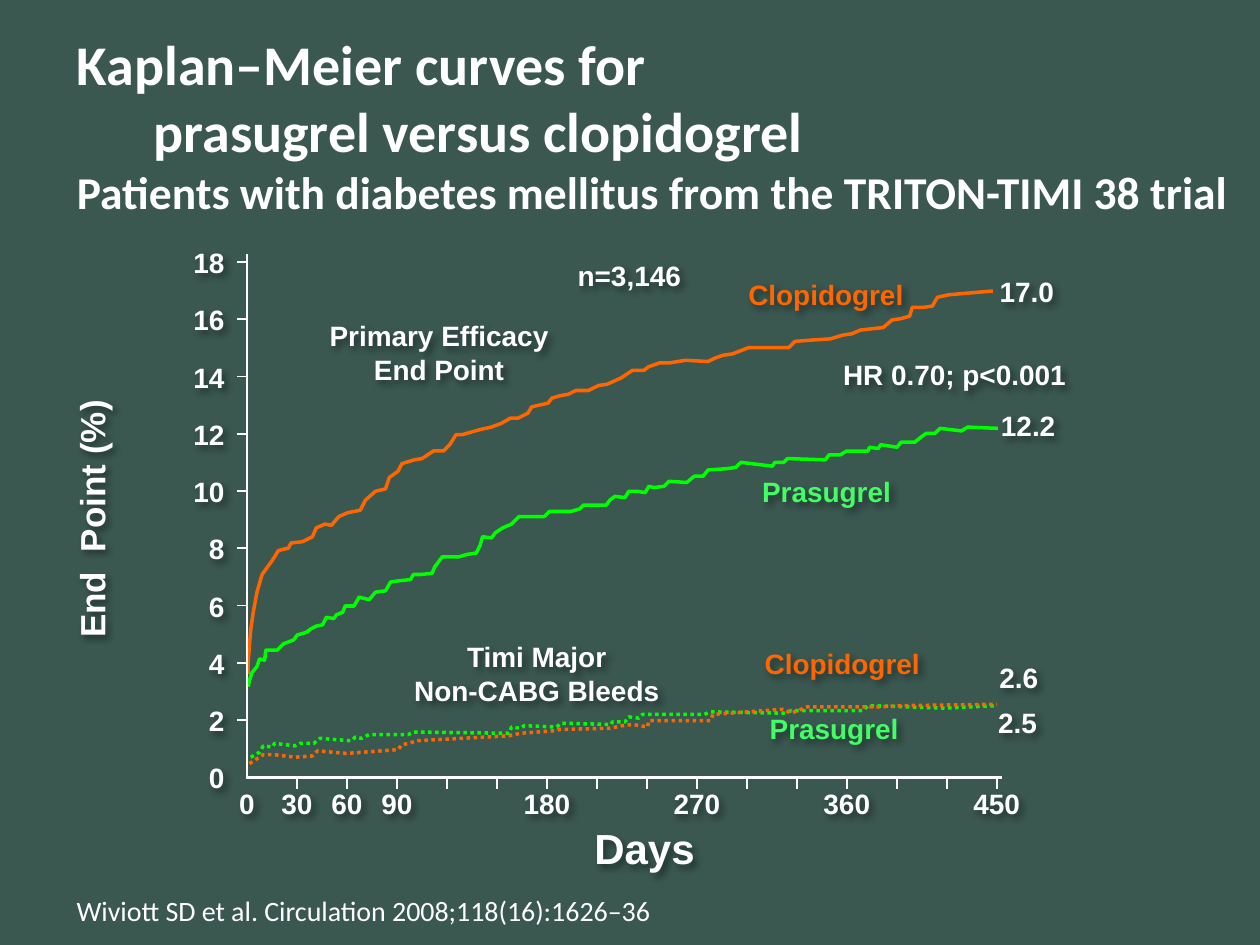
from lxml import etree
from pptx import Presentation
from pptx.dml.color import RGBColor
from pptx.enum.dml import MSO_LINE
from pptx.enum.shapes import MSO_CONNECTOR
from pptx.enum.text import MSO_ANCHOR, MSO_AUTO_SIZE, PP_ALIGN
from pptx.oxml import parse_xml
from pptx.oxml.ns import nsdecls, qn
from pptx.util import Pt

PX = 9144
WHITE = RGBColor(0xFF, 0xFF, 0xFF)
BACK = RGBColor(0x3A, 0x57, 0x50)
ORANGE = RGBColor(0xFF, 0x66, 0x00)
GREEN = RGBColor(0x00, 0xFF, 0x00)
MINT = RGBColor(0x43, 0xFD, 0x64)
LEFT, MID, RIGHT = PP_ALIGN.LEFT, PP_ALIGN.CENTER, PP_ALIGN.RIGHT
LINE = MSO_CONNECTOR.STRAIGHT
DOTS = MSO_LINE.ROUND_DOT
CENTER = MSO_ANCHOR.MIDDLE
NO_FIT, GROW = MSO_AUTO_SIZE.NONE, MSO_AUTO_SIZE.SHAPE_TO_FIT_TEXT

AXIS_X, AXIS_Y = 196, 617
STEP_X, STEP_Y = 39.67, 45.45
TALL = 37
WIDE = {1: 33, 2: 45, 3: 58}

TITLE = [
    ("Kaplan–Meier curves for", 32, 0),
    ("prasugrel versus clopidogrel", 32, 61),
    ("Patients with diabetes mellitus from the TRITON-TIMI 38 trial", 26, 0),
]

CLOP_END = [
    (197, 535), (197, 525), (198, 512), (199, 500), (201, 486), (204, 470),
    (208, 456), (216, 445), (221, 437), (229, 435), (231, 431), (240, 430),
    (248, 426), (251, 419), (258, 416), (263, 417), (269, 410), (276, 407),
    (286, 405), (290, 397), (298, 390), (306, 388), (309, 379), (316, 374),
    (319, 368), (329, 365), (335, 364), (344, 358), (352, 358), (357, 353),
    (362, 345), (367, 345), (381, 341), (390, 339), (398, 336), (405, 332),
    (411, 332), (419, 328), (422, 323), (435, 320), (438, 316), (445, 314),
    (451, 313), (457, 310), (467, 310), (475, 306), (482, 305), (493, 300),
    (502, 294), (511, 294), (515, 291), (524, 288), (532, 288), (544, 286),
    (562, 287), (568, 284), (574, 282), (581, 281), (589, 278), (594, 276),
    (618, 276), (626, 276), (631, 271), (644, 270), (659, 269), (669, 266),
    (676, 265), (683, 262), (692, 261), (701, 260), (708, 254), (715, 253),
    (722, 251), (724, 244), (733, 244), (740, 243), (744, 236), (753, 234),
    (788, 231),
]
PRAS_END = [
    (197, 545), (198, 540), (200, 534), (204, 529), (206, 523), (210, 524),
    (211, 516), (220, 516), (225, 511), (233, 508), (236, 504), (243, 502),
    (247, 499), (251, 497), (256, 496), (259, 490), (265, 491), (267, 488),
    (272, 486), (274, 481), (281, 481), (285, 474), (293, 476), (298, 470),
    (306, 469), (310, 462), (317, 461), (326, 460), (328, 456), (334, 456),
    (343, 455), (345, 450), (351, 442), (364, 442), (371, 440), (378, 439),
    (381, 433), (383, 426), (390, 427), (393, 423), (399, 419), (406, 416),
    (412, 410), (432, 410), (436, 406), (446, 406), (453, 406), (460, 404),
    (463, 401), (481, 401), (484, 397), (488, 394), (496, 395), (499, 390),
    (506, 390), (512, 391), (515, 386), (519, 387), (527, 386), (531, 382),
    (545, 383), (551, 378), (558, 378), (562, 373), (577, 372), (584, 371),
    (588, 367), (613, 370), (615, 367), (622, 367), (625, 364), (655, 365),
    (658, 361), (667, 361), (672, 358), (689, 358), (690, 355), (697, 356),
    (699, 353), (712, 355), (715, 351), (726, 351), (731, 347), (735, 344),
    (742, 344), (746, 340), (763, 342), (768, 339), (792, 340),
]
PRAS_BLEED = [
    (199, 601), (206, 597), (209, 592), (216, 593), (218, 590), (234, 592),
    (238, 590), (249, 590), (254, 586), (279, 588), (282, 585), (287, 586),
    (293, 583), (324, 583), (328, 581), (404, 582), (406, 577), (413, 578),
    (416, 576), (442, 577), (445, 574), (485, 575), (486, 573), (496, 573),
    (499, 569), (507, 570), (510, 567), (550, 567), (559, 567), (564, 565),
    (622, 566), (628, 564), (685, 564), (689, 560), (750, 562), (791, 560),
]
CLOP_BLEED = [
    (198, 606), (209, 599), (218, 599), (234, 601), (248, 600), (252, 596),
    (275, 598), (316, 595), (319, 591), (325, 590), (330, 588), (404, 584),
    (413, 582), (440, 580), (444, 579), (484, 578), (494, 576), (502, 575),
    (514, 577), (515, 572), (549, 572), (558, 572), (564, 572), (566, 567),
    (621, 563), (628, 566), (641, 561), (685, 561), (698, 561), (720, 560),
    (791, 559),
]

NOTES = [
    (["Primary Efficacy", "End Point"], 250, 248, 197, 64, WHITE),
    (["n=3,146"], 448, 200, 103, TALL, WHITE),
    (["Timi Major", "Non-CABG Bleeds"], 317, 503, 218, 64, WHITE),
    (["Clopidogrel"], 583, 215, 145, TALL, ORANGE),
    (["Prasugrel"], 594, 372, 124, TALL, MINT),
    (["HR 0.70; p<0.001"], 658, 279, 199, TALL, WHITE),
    (["12.2"], 784, 319, 64, TALL, WHITE),
    (["17.0"], 783, 213, 64, TALL, WHITE),
    (["Clopidogrel"], 596, 508, 145, TALL, ORANGE),
    (["Prasugrel"], 600, 560, 124, TALL, MINT),
    (["2.5"], 782, 555, 51, TALL, WHITE),
    (["2.6"], 783, 519, 51, TALL, WHITE),
]


def px(*nums):
    return [round(n * PX) for n in nums]


def write(para, text, size=16, font="Arial", color=WHITE, bold=True, align=MID):
    para.alignment = align
    run = para.add_run()
    run.text = text
    run.font.size = Pt(size)
    run.font.name = font
    run.font.bold = bold
    run.font.color.rgb = color


def shade(box):
    box.element.spPr.append(parse_xml(
        f'<a:effectLst {nsdecls("a")}>'
        '<a:outerShdw blurRad="50800" dist="38100" dir="2700000">'
        '<a:srgbClr val="000000"><a:alpha val="40000"/></a:srgbClr>'
        '</a:outerShdw></a:effectLst>'))


def label(slide, lines, x, y, w, h, wrap=False, **form):
    box = slide.shapes.add_textbox(*px(x, y, w, h))
    frame = box.text_frame
    frame.word_wrap = wrap
    frame.auto_size = GROW
    for i, text in enumerate(lines):
        para = frame.add_paragraph() if i else frame.paragraphs[0]
        write(para, text, **form)
    return box


def rule(slide, x1, y1, x2, y2, width=1):
    line = slide.shapes.add_connector(LINE, *px(x1, y1, x2, y2))
    line.line.color.rgb = WHITE
    line.line.width = Pt(width)
    etree.SubElement(line.element.spPr, qn("a:effectLst"))


def curve(slide, dots, color, dash=None):
    path = slide.shapes.build_freeform(*dots[0], scale=PX)
    path.add_line_segments(dots[1:], close=False)
    shape = path.convert_to_shape()
    shape.shadow.inherit = False
    shape.fill.background()
    shape.line.color.rgb = color
    shape.line.width = Pt(2)
    if dash:
        shape.line.dash_style = dash


def head(slide):
    title = slide.shapes.title
    title.left, title.top, title.width, title.height = px(51, 24, 949, 149)
    frame = title.text_frame
    frame.auto_size = NO_FIT
    frame.vertical_anchor = CENTER
    for i, (text, size, indent) in enumerate(TITLE):
        para = frame.add_paragraph() if i else frame.paragraphs[0]
        write(para, text, size=size, font="Calibri", align=LEFT)
        para._p.get_or_add_pPr().set("marL", str(indent * PX))


def axes(slide):
    rule(slide, AXIS_X, 202, AXIS_X, AXIS_Y, 1.5)
    rule(slide, AXIS_X - 1, AXIS_Y, 795, AXIS_Y, 1.5)
    for i in range(10):
        y = AXIS_Y - i * STEP_Y
        if i:
            rule(slide, AXIS_X - 8, y, AXIS_X, y)
        text = str(2 * i)
        wide = WIDE[len(text)]
        shade(label(slide, [text], 188 - wide, y - 18, wide, TALL, align=RIGHT))
    for i in range(1, 16):
        x = AXIS_X + i * STEP_X
        rule(slide, x, AXIS_Y, x, AXIS_Y + 9)
    for day in (0, 30, 60, 90, 180, 270, 360, 450):
        x = AXIS_X + day / 30 * STEP_X
        wide = WIDE[len(str(day))]
        shade(label(slide, [str(day)], x - wide / 2, 619, wide, TALL))
    shade(label(slide, ["Days"], 461, 648, 101, 51, size=24))
    side = label(slide, ["End  Point (%)"], 51, 312, 54, 200, size=20)
    side.text_frame._txBody.bodyPr.set("vert", "vert270")
    shade(side)


def main():
    deck = Presentation()
    deck.slide_width, deck.slide_height = px(1000, 750)
    slide = deck.slides.add_slide(deck.slide_layouts[5])
    slide.background.fill.solid()
    slide.background.fill.fore_color.rgb = BACK
    head(slide)
    label(slide, ["Wiviott SD et al. Circulation 2008;118(16):1626–36"],
          51, 704, 621, TALL, wrap=True, font="Calibri", bold=False, align=LEFT)
    curve(slide, CLOP_END, ORANGE)
    curve(slide, PRAS_END, GREEN)
    curve(slide, PRAS_BLEED, GREEN, DOTS)
    curve(slide, CLOP_BLEED, ORANGE, DOTS)
    axes(slide)
    for lines, x, y, w, h, color in NOTES:
        shade(label(slide, lines, x, y, w, h, color=color))
    deck.save("out.pptx")


if __name__ == "__main__":
    main()
